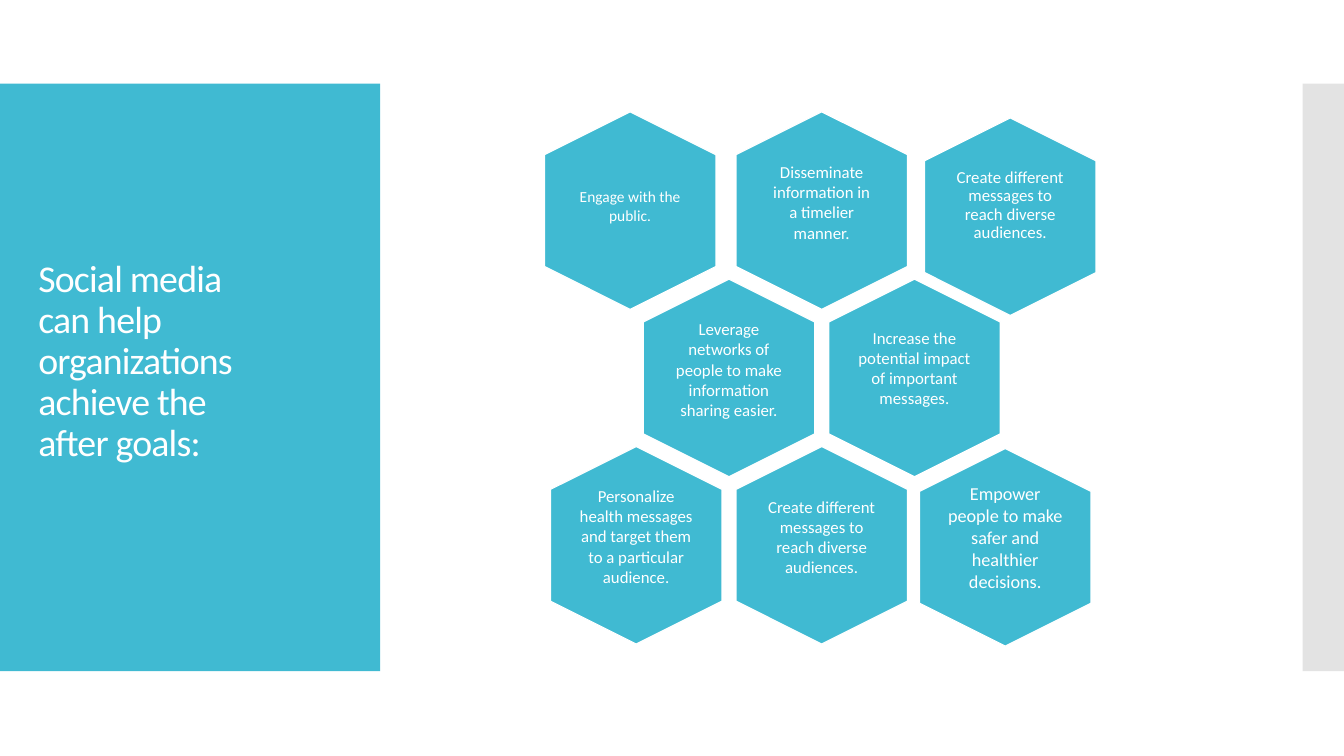
from pptx import Presentation
from pptx import util as u
from pptx.dml.color import RGBColor
from pptx.enum import shapes, text

TEAL = RGBColor(0x40, 0xBA, 0xD2)
GREY = RGBColor(0xE3, 0xE3, 0xE3)
WHITE = RGBColor(0xFF, 0xFF, 0xFF)
FONT = "Calibri"
HEX_LENGTH, HEX_BREADTH = 1.96, 1.7
LABEL_WIDTH, LABEL_HEIGHT = 1.17, 1.35


def add_filled(kind, left, top, width, height, color):
    shape = slide.shapes.add_shape(
        kind, u.Inches(left), u.Inches(top), u.Inches(width), u.Inches(height))
    shape.shadow.inherit = False
    shape.fill.solid()
    shape.fill.fore_color.rgb = color
    shape.line.fill.background()
    return shape


def style_text(frame, size, align, line_spacing):
    frame.word_wrap = True
    frame.vertical_anchor = text.MSO_ANCHOR.MIDDLE
    for paragraph in frame.paragraphs:
        paragraph.alignment = align
        paragraph.line_spacing = line_spacing
        for run in paragraph.runs:
            run.font.name = FONT
            run.font.size = u.Pt(size)
            run.font.color.rgb = WHITE


prs = Presentation()
prs.slide_width, prs.slide_height = u.Inches(13.33), u.Inches(7.5)
slide = prs.slides.add_slide(prs.slide_layouts[5])

add_filled(shapes.MSO_SHAPE.RECTANGLE, 0, 0.83, 3.77, 5.83, TEAL)
add_filled(shapes.MSO_SHAPE.RECTANGLE, 12.92, 0.83, 0.41, 5.83, GREY)

title = slide.shapes.title
slide.shapes.element.append(title.element)
title.left, title.top = u.Inches(0.28), u.Inches(1.23)
title.width, title.height = u.Inches(3.22), u.Inches(5.03)
title.text_frame.text = "Social media\vcan help organizations\vachieve the\vafter goals:"
title.text_frame.auto_size = text.MSO_AUTO_SIZE.NONE
title.text_frame.margin_bottom = u.Inches(0.35)
style_text(title.text_frame, 27, text.PP_ALIGN.LEFT, 0.9)
for run in title.text_frame.paragraphs[0].runs:
    run.font._element.set("spc", "-60")

goals = [
    (8.15, 2.09, "Disseminate information in a timelier manner.", 12, 1, 0.05, 0.22),
    (6.25, 2.09, "Engage with the public.", 11, 1, 0, 0.1),
    (7.23, 3.75, "Leverage networks of people to make information sharing easier.", 12, 1, 0.05, 0.22),
    (9.07, 3.75, "Increase the potential impact of important messages.", 12, 1, 0, 0.2),
    (8.15, 5.41, "Create different messages to reach diverse audiences.", 12, 1, 0.05, 0.22),
    (6.31, 5.41, "Personalize health messages and target them to a particular audience.", 12, 1, 0, 0.18),
    (10.02, 2.15, "Create different messages to reach diverse audiences.", 12, 0.9, 0.05, 0.27),
    (9.97, 5.43, "Empower people to make safer and healthier decisions.", 13, 1, 0, 0.2),
]
for center_x, center_y, goal, size, line_spacing, inset, bottom_inset in goals:
    hexagon = add_filled(
        shapes.MSO_SHAPE.HEXAGON, center_x - HEX_LENGTH / 2,
        center_y - HEX_BREADTH / 2, HEX_LENGTH, HEX_BREADTH, TEAL)
    hexagon.rotation = 90
    hexagon.line.color.rgb = WHITE
    hexagon.line.width = u.Pt(0.85)
    label = slide.shapes.add_textbox(
        u.Inches(center_x - LABEL_WIDTH / 2), u.Inches(center_y - LABEL_HEIGHT / 2),
        u.Inches(LABEL_WIDTH), u.Inches(LABEL_HEIGHT)).text_frame
    label.text = goal
    label.margin_left = label.margin_right = label.margin_top = u.Inches(inset)
    label.margin_bottom = u.Inches(bottom_inset)
    style_text(label, size, text.PP_ALIGN.CENTER, line_spacing)

prs.save("out.pptx")
